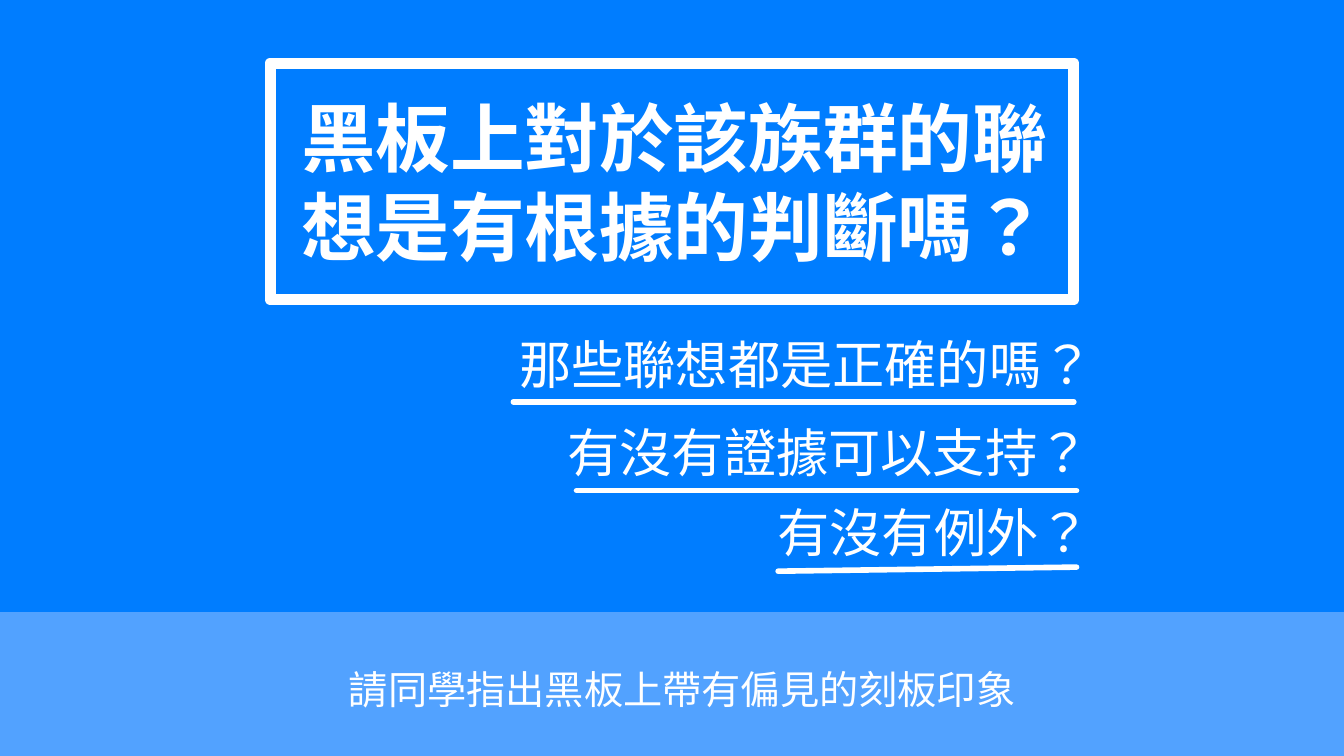
from dataclasses import dataclass

from pptx import Presentation
from pptx.dml.color import RGBColor
from pptx.enum.shapes import MSO_CONNECTOR, MSO_SHAPE
from pptx.enum.text import MSO_ANCHOR, MSO_AUTO_SIZE, PP_ALIGN
from pptx.oxml.xmlchemy import OxmlElement
from pptx.slide import Slide
from pptx.util import Inches, Pt

RECTANGLE = MSO_SHAPE.RECTANGLE
STRAIGHT = MSO_CONNECTOR.STRAIGHT
CENTER = PP_ALIGN.CENTER
TOP = MSO_ANCHOR.TOP
NO_AUTOFIT = MSO_AUTO_SIZE.NONE

WHITE = RGBColor(0xFF, 0xFF, 0xFF)
BLUE = RGBColor(0x00, 0x7D, 0xFF)
LIGHT_BLUE = RGBColor(0x52, 0xA2, 0xFF)

FONT = "Noto Sans CJK TC"
LANGUAGE = "zh-TW"
LAYOUT_TITLE_ONLY = 5


@dataclass(frozen=True)
class Panel:
    left: float
    top: float
    width: float
    height: float
    line: RGBColor
    weight: float
    fill: RGBColor | None = None


@dataclass(frozen=True)
class Caption:
    words: str
    left: float
    top: float
    width: float
    height: float
    size: float


@dataclass(frozen=True)
class Underline:
    left: float
    start: float
    right: float
    end: float


FOOTER_BAND = Panel(-0.02, 3.91, 10.14, 1.73, LIGHT_BLUE, 2, LIGHT_BLUE)
MAIN_BAND = Panel(-0.02, -0.07, 10.14, 4.61, BLUE, 2, BLUE)
TITLE_FRAME = Panel(2.01, 0.47, 5.98, 1.76, WHITE, 6)

TITLE = Caption("黑板上對於該族群的聯想是有根據的判斷嗎？", 1.93, 0.63, 6.17, 1.45, 40)

CAPTIONS = [
    Caption("請同學指出黑板上帶有偏見的刻板印象", 2.32, 4.9, 5.36, 0.45, 21),
    Caption("那些聯想都是正確的嗎？", 3.59, 2.42, 4.67, 0.57, 28),
    Caption("有沒有證據可以支持？", 3.95, 3.08, 4.28, 0.57, 28),
    Caption("有沒有例外？", 5.52, 3.67, 2.71, 0.57, 28),
]

UNDERLINES = [
    Underline(3.82, 2.99, 7.99, 2.99),
    Underline(4.29, 3.65, 8.01, 3.65),
    Underline(5.79, 4.25, 8.01, 4.22),
]


def style_line(shape, color: RGBColor, weight: float) -> None:
    shape.line.color.rgb = color
    shape.line.width = Pt(weight)
    outline = shape.line._get_or_add_ln()
    outline.set("cap", "rnd")
    outline.append(OxmlElement("a:round"))


def draw_panel(page: Slide, panel: Panel) -> None:
    shape = page.shapes.add_shape(
        RECTANGLE,
        Inches(panel.left),
        Inches(panel.top),
        Inches(panel.width),
        Inches(panel.height),
    )
    shape.shadow.inherit = False
    if panel.fill is None:
        shape.fill.background()
    else:
        shape.fill.solid()
        shape.fill.fore_color.rgb = panel.fill
    style_line(shape, panel.line, panel.weight)


def write_text(box, caption: Caption, bold: bool, wrap: bool) -> None:
    frame = box.text_frame
    frame.word_wrap = wrap
    frame.auto_size = NO_AUTOFIT
    frame.vertical_anchor = TOP
    para = frame.paragraphs[0]
    para.alignment = CENTER
    span = para.add_run()
    span.text = caption.words
    span.font.size = Pt(caption.size)
    span.font.bold = bold
    span.font.color.rgb = WHITE
    span.font.name = FONT
    properties = span.font._element
    properties.set("lang", LANGUAGE)
    east_asian = OxmlElement("a:ea")
    east_asian.set("typeface", FONT)
    properties.append(east_asian)


def draw_title(page: Slide, caption: Caption) -> None:
    title = page.shapes.title
    title.left, title.top = Inches(caption.left), Inches(caption.top)
    title.width, title.height = Inches(caption.width), Inches(caption.height)
    write_text(title, caption, bold=True, wrap=True)
    page.shapes._spTree.append(title._element)


def draw_caption(page: Slide, caption: Caption) -> None:
    box = page.shapes.add_textbox(
        Inches(caption.left),
        Inches(caption.top),
        Inches(caption.width),
        Inches(caption.height),
    )
    write_text(box, caption, bold=False, wrap=False)
    properties = box.text_frame.paragraphs[0]._p.get_or_add_pPr()
    properties.set("marL", str(Inches(0.15)))
    properties.set("indent", "0")


def draw_underline(page: Slide, underline: Underline) -> None:
    connector = page.shapes.add_connector(
        STRAIGHT,
        Inches(underline.left),
        Inches(underline.start),
        Inches(underline.right),
        Inches(underline.end),
    )
    style_line(connector, WHITE, 3)
    connector._element.spPr.append(OxmlElement("a:effectLst"))


def main() -> None:
    deck = Presentation()
    deck.slide_width = Inches(10)
    deck.slide_height = Inches(10 * 9 / 16)
    page = deck.slides.add_slide(deck.slide_layouts[LAYOUT_TITLE_ONLY])
    draw_panel(page, FOOTER_BAND)
    draw_panel(page, MAIN_BAND)
    draw_title(page, TITLE)
    draw_panel(page, TITLE_FRAME)
    for caption in CAPTIONS:
        draw_caption(page, caption)
    for underline in UNDERLINES:
        draw_underline(page, underline)
    deck.save("out.pptx")


if __name__ == "__main__":
    main()
